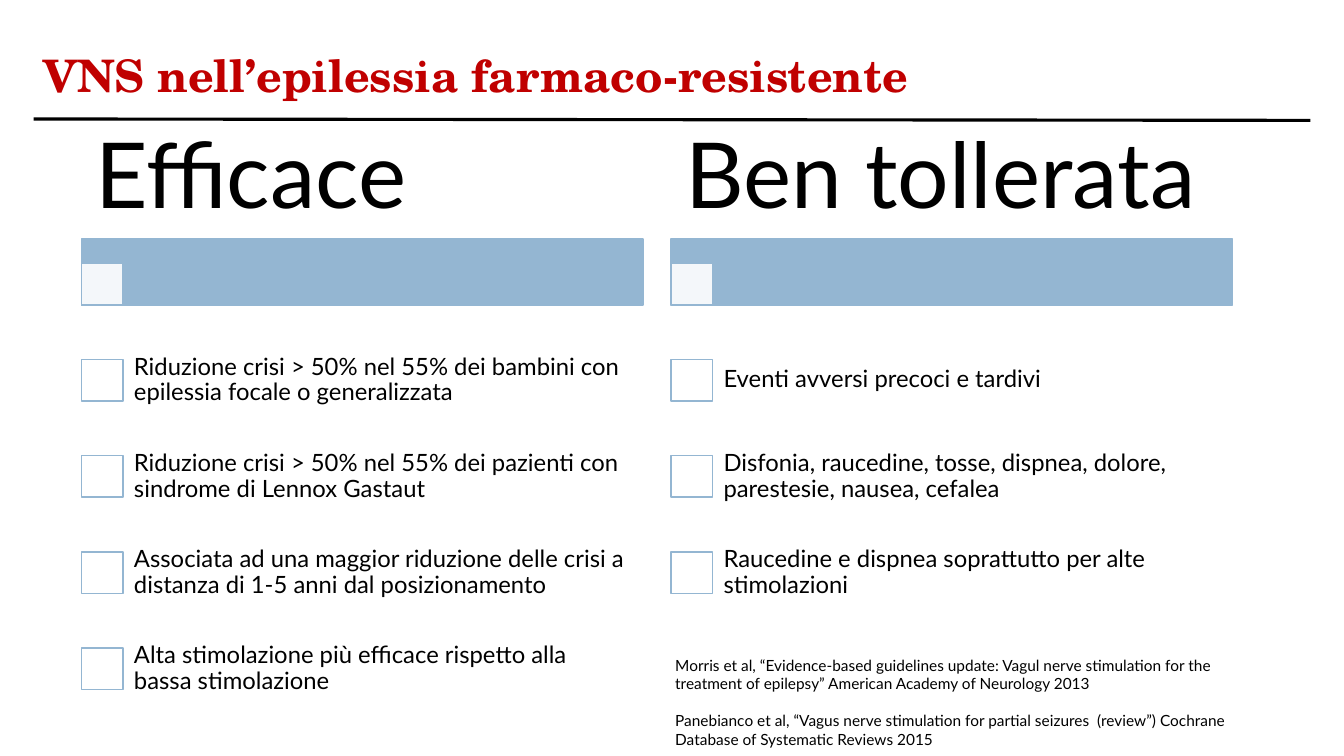
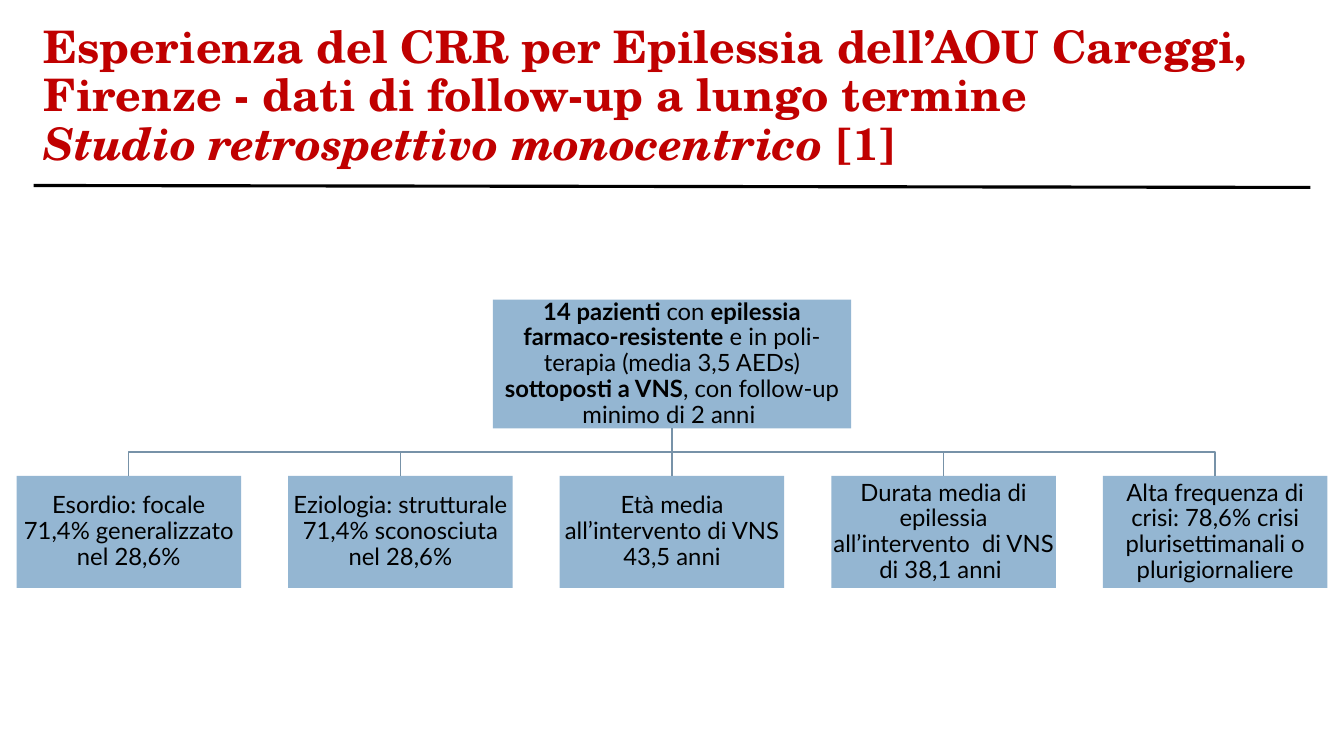
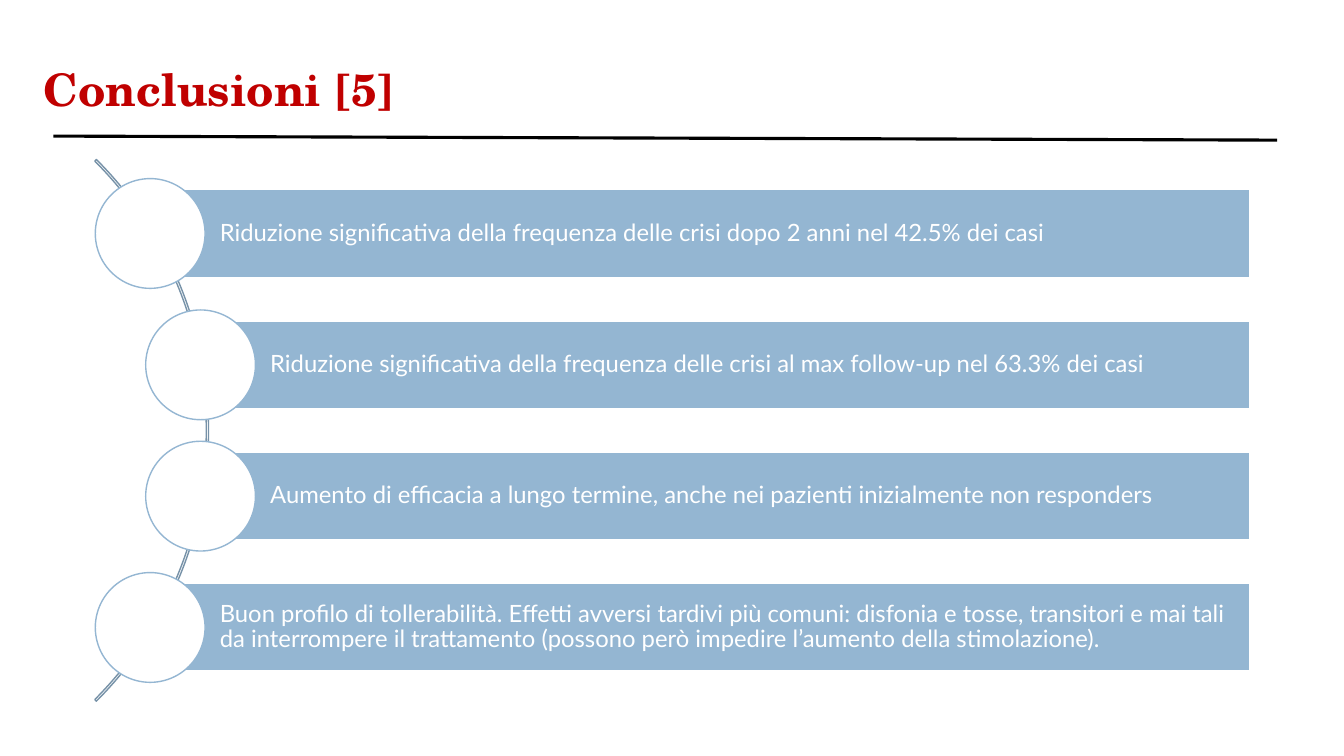
from dataclasses import dataclass

from lxml import etree
from pptx import Presentation
from pptx.dml.color import RGBColor
from pptx.enum import shapes as kinds, text as texts
from pptx.oxml.ns import qn
from pptx.util import Pt

RED = RGBColor(0xC0, 0x00, 0x00)
BLUE = RGBColor(0x94, 0xB6, 0xD2)
SLATE = RGBColor(0x77, 0x92, 0xA8)
BLACK = RGBColor(0x00, 0x00, 0x00)
WHITE = RGBColor(0xFF, 0xFF, 0xFF)
SERIF = "TeX Gyre Schola"
SANS = "Lato"
RECT = kinds.MSO_SHAPE.RECTANGLE
OVAL = kinds.MSO_SHAPE.OVAL
ARC = kinds.MSO_SHAPE.BLOCK_ARC
LEFT = texts.PP_ALIGN.LEFT
MID = texts.PP_ALIGN.CENTER
TOP = texts.MSO_ANCHOR.TOP
MIDDLE = texts.MSO_ANCHOR.MIDDLE


@dataclass(frozen=True)
class Box:
    x: float
    y: float
    w: float
    h: float

    def pts(self) -> tuple:
        return Pt(self.x), Pt(self.y), Pt(self.w), Pt(self.h)


@dataclass(frozen=True)
class Run:
    text: str
    bold: bool = False
    slant: bool = False


@dataclass(frozen=True)
class Style:
    font: str = SANS
    size: float = 17
    color: RGBColor = BLACK
    align: int = LEFT
    inset: tuple = (7.2, 3.6, 7.2, 3.6)
    lead: float = 0.9
    gap: float = 0
    anchor: int = MIDDLE


@dataclass(frozen=True)
class Rule:
    x1: float
    y1: float
    x2: float
    y2: float


@dataclass(frozen=True)
class Column:
    x: float
    head: str
    items: tuple


@dataclass(frozen=True)
class Point:
    x: float
    text: str


TITLE = Style(SERIF, 32, RED)
HEAD = Style(size=65, inset=(10, 6.5, 10, 6.5))
ITEM = Style(inset=(9.4, 9.4, 9.4, 9.4))
NOTE = Style(size=11, lead=1, gap=13.2, anchor=TOP)
NODE = Style(align=MID, inset=(0.8, 0.8, 0.8, 0.8))
BAND = Style(color=WHITE, inset=(49.7, 3.6, 3.6, 3.6))

COLUMNS = (
    Column(58.3, "Efficace", (
        "Riduzione crisi > 50% nel 55% dei bambini con epilessia focale o generalizzata",
        "Riduzione crisi > 50% nel 55% dei pazienti con sindrome di Lennox Gastaut",
        "Associata ad una maggior riduzione delle crisi a distanza di 1-5 anni dal posizionamento",
        "Alta stimolazione più efficace rispetto alla bassa stimolazione",
    )),
    Column(479.4, "Ben tollerata", (
        "Eventi avversi precoci e tardivi",
        "Disfonia, raucedine, tosse, dispnea, dolore, parestesie, nausea, cefalea",
        "Raucedine e dispnea soprattutto per alte stimolazioni",
    )),
)
NOTES = (
    "Morris et al, “Evidence-based guidelines update: Vagul nerve stimulation for the "
    "treatment of epilepsy” American Academy of Neurology 2013",
    "Panebianco et al, “Vagus nerve stimulation for partial seizures  (review”) Cochrane "
    "Database of Systematic Reviews 2015",
)
ROOT = [
    Run("14 pazienti ", True),
    Run("con "),
    Run("epilessia farmaco-resistente", True),
    Run(" e in poli-terapia (media 3,5 AEDs) "),
    Run("sottoposti a VNS", True),
    Run(", con follow-up minimo di 2 anni "),
]
LEAVES = (
    "Esordio: focale 71,4% generalizzato nel 28,6%",
    "Eziologia: strutturale 71,4% sconosciuta nel 28,6%",
    "Età media all’intervento di VNS 43,5 anni",
    "Durata media di epilessia all’intervento  di VNS di 38,1 anni ",
    "Alta frequenza di crisi: 78,6% crisi plurisettimanali o plurigiornaliere",
)
POINTS = (
    Point(107.3, "Riduzione significativa della frequenza delle crisi dopo 2 anni nel 42.5% dei casi"),
    Point(143.3, "Riduzione significativa della frequenza delle crisi al max follow-up nel 63.3% dei casi"),
    Point(143.3, "Aumento di efficacia a lungo termine, anche nei pazienti inizialmente non responders"),
    Point(107.3, "Buon profilo di tollerabilità. Effetti avversi tardivi più comuni: disfonia e tosse, "
                 "transitori e mai tali da interrompere il trattamento (possono però impedire "
                 "l’aumento della stimolazione)."),
)


def write(shape, paras: list, style: Style) -> None:
    frame = shape.text_frame
    frame.word_wrap = True
    frame.vertical_anchor = style.anchor
    (frame.margin_left, frame.margin_top,
     frame.margin_right, frame.margin_bottom) = map(Pt, style.inset)
    for i, runs in enumerate(paras):
        para = frame.add_paragraph() if i else frame.paragraphs[0]
        para.alignment = style.align
        para.line_spacing = style.lead
        if i and style.gap:
            para.space_before = Pt(style.gap)
        for part in runs:
            for j, line in enumerate(part.text.split("\n")):
                if j:
                    para.add_line_break()
                if not line:
                    continue
                run = para.add_run()
                run.text = line
                font = run.font
                font.name = style.font
                font.size = Pt(style.size)
                font.color.rgb = style.color
                font.bold = part.bold
                font.italic = part.slant


def label(slide, box: Box, paras: list, style: Style) -> None:
    write(slide.shapes.add_textbox(*box.pts()), paras, style)


def paint(shape, fill=None, line=None) -> None:
    shape.shadow.inherit = False
    if fill is None:
        shape.fill.background()
    else:
        shape.fill.solid()
        shape.fill.fore_color.rgb = fill
    if line is None:
        shape.line.fill.background()
    else:
        shape.line.color.rgb = line
        shape.line.width = Pt(1)


def draw(slide, kind, box: Box, fill=None, line=None):
    shape = slide.shapes.add_shape(kind, *box.pts())
    paint(shape, fill, line)
    return shape


def fade(shape, part: int) -> None:
    tint = shape._element.spPr.find(qn("a:solidFill"))[0]
    etree.SubElement(tint, qn("a:alpha")).set("val", str(part * 1000))


def link(slide, rule: Rule, color: RGBColor, width: float):
    line = slide.shapes.add_connector(
        kinds.MSO_CONNECTOR.STRAIGHT, Pt(rule.x1), Pt(rule.y1), Pt(rule.x2), Pt(rule.y2))
    line.line.color.rgb = color
    line.line.width = Pt(width)
    etree.SubElement(line._element.spPr, qn("a:effectLst"))
    return line


def start(deck, rule: Rule, box: Box, title: list):
    slide = deck.slides.add_slide(deck.slide_layouts[6])
    link(slide, rule, BLACK, 2.25)
    label(slide, box, [title], TITLE)
    return slide


def effects(deck) -> None:
    slide = start(deck, Rule(24, 85, 936, 86), Box(24, 3.6, 889, 104.4),
                  [Run("VNS nell’epilessia farmaco-resistente", True)])
    wide, side, step = 401, 29.6, 68.7
    for col in COLUMNS:
        draw(slide, RECT, Box(col.x, 170.6, wide, 47.2), BLUE, BLUE)
        fade(draw(slide, RECT, Box(col.x, 188.4, side, side), WHITE, BLUE), 90)
        label(slide, Box(col.x, 85.7, wide, 85), [[Run(col.head)]], HEAD)
        for i, item in enumerate(col.items):
            y = 237.3 + i * step
            draw(slide, RECT, Box(col.x, y + (step - side) / 2, side, side), WHITE, BLUE)
            label(slide, Box(col.x + 28, y, wide - 28, step), [[Run(item)]], ITEM)
    label(slide, Box(475.2, 465.1, 430.6, 74.2), [[Run(note)] for note in NOTES], NOTE)


def cohort(deck) -> None:
    slide = start(deck, Rule(24, 132.5, 936, 133.9), Box(24, 17.3, 912, 104.4), [
        Run("Esperienza del CRR per Epilessia dell’AOU Careggi, Firenze - dati di "
            "follow-up a lungo termine\n", True),
        Run("Studio retrospettivo monocentrico ", True, True),
        Run("[1]", True),
    ])
    mid, base, bus, top = 480, 306, 323, 340
    wide, step = 160.4, 194
    root = draw(slide, RECT, Box(mid - 128, 214, 256, base - 214), BLUE)
    write(root, [ROOT], NODE)
    for i, leaf in enumerate(LEAVES):
        x = mid + (i - len(LEAVES) // 2) * step
        node = draw(slide, RECT, Box(x - wide / 2, top, wide, 80), BLUE)
        write(node, [[Run(leaf)]], NODE)
        if x == mid:
            line = link(slide, Rule(mid, base, x, top), SLATE, 1)
            line.begin_connect(root, 2)
            line.end_connect(node, 0)
        else:
            pen = slide.shapes.build_freeform(Pt(mid), Pt(base))
            bends = ((mid, bus), (x, bus), (x, top))
            pen.add_line_segments([(Pt(a), Pt(b)) for a, b in bends], close=False)
            paint(pen.convert_to_shape(), line=SLATE)


def closing(deck) -> None:
    slide = start(deck, Rule(38.2, 97.2, 912.2, 100.1), Box(24, 13.7, 912, 104.4),
                  [Run("Conclusioni [5]", True)])
    arc = draw(slide, ARC, Box(-398.2, 33.8, 547.2, 547.2), line=SLATE)
    for i, value in enumerate((189, 27, 0.003)):
        arc.adjustments[i] = value
    edge, high, disc, step = 892.8, 62.6, 78.4, 93.8
    for i, point in enumerate(POINTS):
        y = 135.5 + i * step
        band = draw(slide, RECT, Box(point.x, y, edge - point.x, high), BLUE, WHITE)
        write(band, [[Run(point.text)]], BAND)
        draw(slide, OVAL, Box(point.x - disc / 2, y + (high - disc) / 2, disc, disc), WHITE, BLUE)


def main() -> None:
    deck = Presentation()
    deck.slide_width, deck.slide_height = Pt(960), Pt(540)
    effects(deck)
    cohort(deck)
    closing(deck)
    deck.save("out.pptx")


if __name__ == "__main__":
    main()
